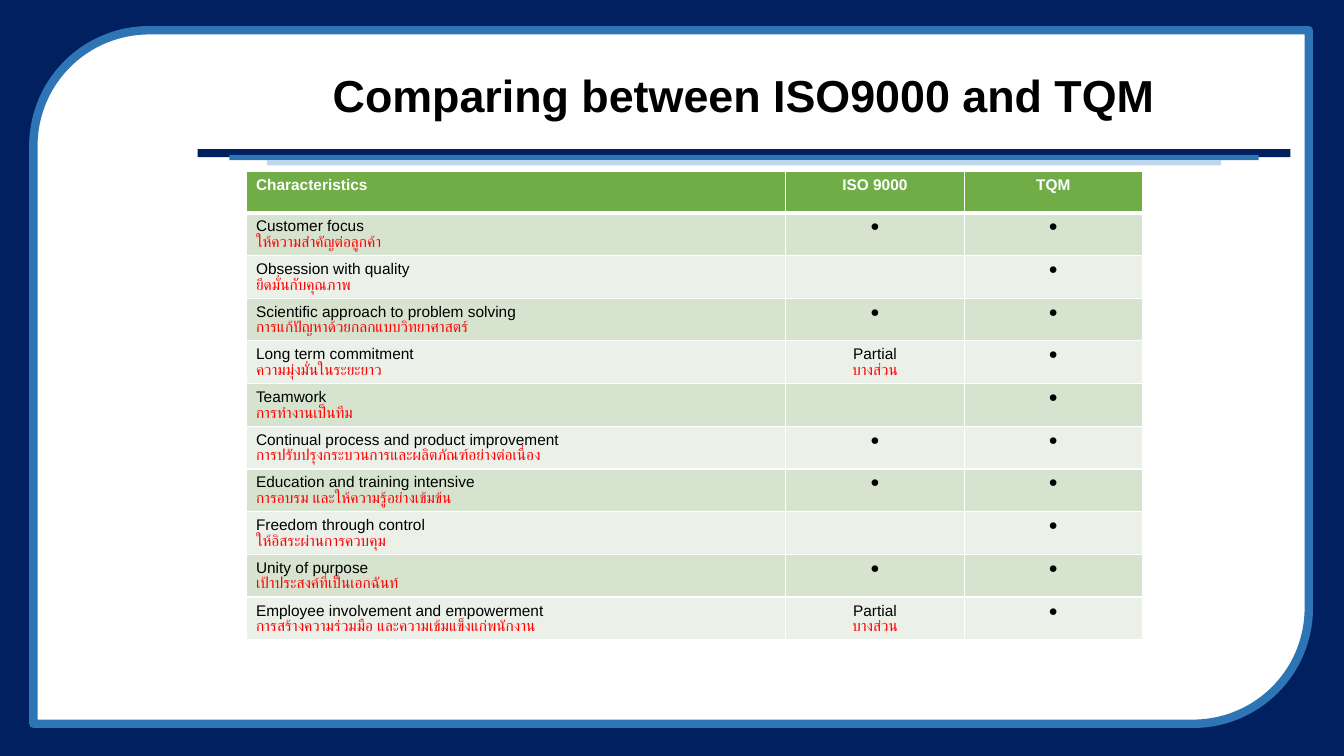
from lxml import etree
from pptx import Presentation
from pptx.dml.color import RGBColor
from pptx.enum.shapes import MSO_SHAPE
from pptx.enum.text import MSO_ANCHOR, PP_ALIGN
from pptx.oxml.ns import qn
from pptx.util import Inches, Pt

RECTANGLE, PANEL = MSO_SHAPE.RECTANGLE, MSO_SHAPE.ROUND_2_DIAG_RECTANGLE
MIDDLE = MSO_ANCHOR.MIDDLE
LEFT, CENTER = PP_ALIGN.LEFT, PP_ALIGN.CENTER

COLORS = {
    "navy": "002060", "blue": "2E75B6", "pale blue": "BDD7EE", "white": "FFFFFF",
    "black": "000000", "red": "FF0000", "green": "70AD47",
    "dark band": "D5E3CF", "light band": "EBF1E9",
}
DOT = ("●",)
NONE = ()
PARTIAL = ("Partial", "บางส่วน")
HEADINGS = ("Characteristics", "ISO 9000", "TQM")
CHARACTERISTICS = [
    ("Customer focus", "ให้ความสำคัญต่อลูกค้า", DOT),
    ("Obsession with quality", "ยึดมั่นกับคุณภาพ", NONE),
    ("Scientific approach to problem solving", "การแก้ปัญหาด้วยกลกแบบวิทยาศาสตร์", DOT),
    ("Long term commitment", "ความมุ่งมั่นในระยะยาว", PARTIAL),
    ("Teamwork", "การทำงานเป็นทีม", NONE),
    ("Continual process and product improvement",
     "การปรับปรุงกระบวนการและผลิตภัณฑ์อย่างต่อเนื่อง", DOT),
    ("Education and training intensive", "การอบรม และให้ความรู้อย่างเข้มข้น", DOT),
    ("Freedom through control", "ให้อิสระผ่านการควบคุม", NONE),
    ("Unity of purpose", "เป้าประสงค์ที่เป็นเอกฉันท์", DOT),
    ("Employee involvement and empowerment",
     "การสร้างความร่วมมือ และความเข้มแข็งแก่พนักงาน", PARTIAL),
]
AXIS = 55.36  # shared centre of the title and the bars under it


class SlideBuilder:
    """Draws on a grid of 100 columns by 100 rows over the whole slide."""

    def __init__(self, deck, font="Arial"):
        self.font = font
        self.column = deck.slide_width / 100
        self.row = deck.slide_height / 100
        self.page = deck.slides.add_slide(deck.slide_layouts[5])

    def place(self, left, top, width, height):
        return (round(left * self.column), round(top * self.row),
                round(width * self.column), round(height * self.row))

    def color(self, name):
        return RGBColor.from_string(COLORS[name])

    def format(self, paragraph, size, color, align, bold=False):
        paragraph.alignment = align
        paragraph.font.name = self.font
        paragraph.font.size = Pt(size)
        paragraph.font.bold = bold
        paragraph.font.color.rgb = self.color(color)

    def shape(self, kind, area, fill, line=None, line_width=0):
        shape = self.page.shapes.add_shape(kind, *self.place(*area))
        shape.shadow.inherit = False
        shape.fill.solid()
        shape.fill.fore_color.rgb = self.color(fill)
        if line:
            shape.line.color.rgb = self.color(line)
            shape.line.width = Pt(line_width)
        else:
            shape.line.fill.background()
        return shape

    def title(self, text, area):
        title = self.page.shapes.title
        title.left, title.top, title.width, title.height = self.place(*area)
        frame = title.text_frame
        frame.text = text
        frame.vertical_anchor = MIDDLE
        frame.paragraphs[0].line_spacing = 0.9
        self.format(frame.paragraphs[0], 32, "black", CENTER, bold=True)
        title._element.getparent().append(title._element)  # in front of the panel

    def border(self, cell, top, bottom):
        properties = cell._tc.get_or_add_tcPr()
        for side, width in (("lnL", 1), ("lnR", 1), ("lnT", top), ("lnB", bottom)):
            line = etree.SubElement(properties, qn(f"a:{side}"), w=str(Pt(width)))
            fill = etree.SubElement(line, qn("a:solidFill"))
            etree.SubElement(fill, qn("a:srgbClr"), val=COLORS["white"])

    def cell(self, cell, lines, fill, colors, align, bold=False):
        cell.fill.solid()
        cell.fill.fore_color.rgb = self.color(fill)
        cell.text_frame.text = "\n".join(lines)
        for paragraph, color in zip(cell.text_frame.paragraphs, colors):
            self.format(paragraph, 11, color, align, bold)

    def table(self, rows, left, top, widths, row_height):
        area = self.place(left, top, sum(widths), row_height * len(rows))
        table = self.page.shapes.add_table(len(rows), len(widths), *area).table
        properties = table._tbl.tblPr
        properties.remove(properties.find(qn("a:tableStyleId")))
        table.horz_banding = False
        for column, width in zip(table.columns, widths):
            column.width = round(width * self.column)
        for r, row in enumerate(rows):
            table.rows[r].height = round(row_height * self.row)
            header = r == 0
            fill = "green" if header else "dark band" if r % 2 else "light band"
            colors = ("white",) if header else ("black", "red")
            for c, lines in enumerate(row):
                cell = table.cell(r, c)
                self.border(cell, top=3 if r == 1 else 1, bottom=3 if header else 1)
                self.cell(cell, lines, fill, colors, CENTER if c else LEFT, header)


def main():
    deck = Presentation()
    deck.slide_width, deck.slide_height = Inches(13.33), Inches(7.5)
    builder = SlideBuilder(deck)

    builder.shape(RECTANGLE, (0, 0, 100, 100), "navy")
    panel = builder.shape(PANEL, (2.48, 4, 94.9, 91.73), "white", "blue", 6)
    panel.rotation = 180
    for top, width, height, color in (
        (19.73, 81.32, 1.07, "navy"),
        (20.53, 76.6, 0.67, "blue"),
        (21.2, 70.97, 0.67, "pale blue"),
    ):
        builder.shape(RECTANGLE, (AXIS - width / 2, top, width, height), color)
    builder.title("Comparing between ISO9000 and TQM", (AXIS - 40.66, 6.53, 81.32, 12.93))

    rows = [[(heading,) for heading in HEADINGS]]
    rows += [[(english, thai), iso, DOT] for english, thai, iso in CHARACTERISTICS]
    builder.table(rows, 18.3, 22.67, (40.13, 13.35, 13.2), 5.47)
    deck.save("out.pptx")


if __name__ == "__main__":
    main()
